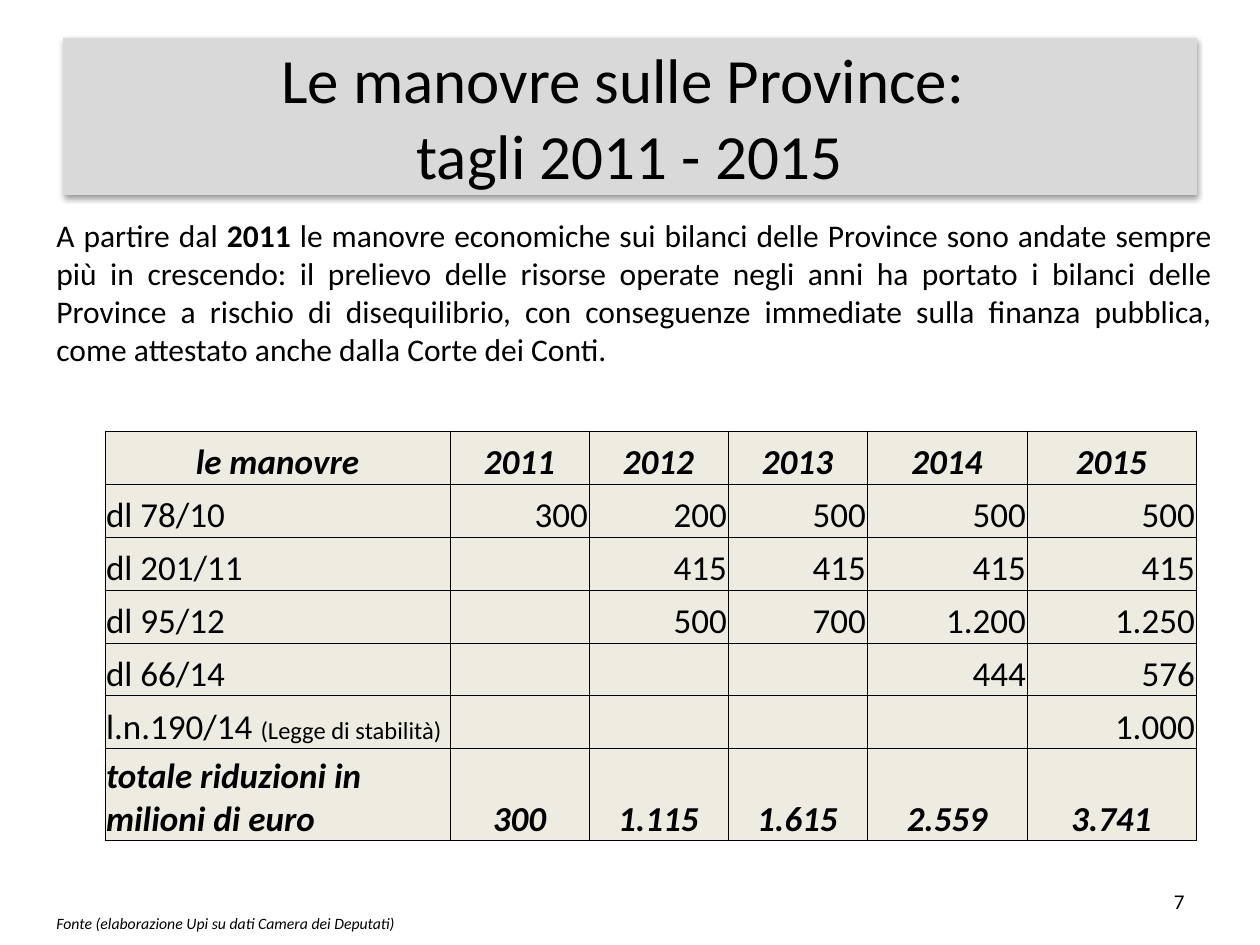
from lxml import etree
from pptx import Presentation
from pptx.dml.color import RGBColor
from pptx.enum.text import MSO_ANCHOR as Anchor, MSO_AUTO_SIZE as AutoSize, PP_ALIGN as Align
from pptx.oxml import parse_xml
from pptx.oxml.ns import nsdecls, qn
from pptx.util import Emu, Pt

PX_PER_INCH = 126
FONT = "Calibri"
BLACK = RGBColor(0x00, 0x00, 0x00)
TITLE_GREY = RGBColor(0xD9, 0xD9, 0xD9)
CELL_BEIGE = RGBColor(0xEE, 0xEC, 0xE1)

INTRO = [
    ("A partire dal ", False),
    ("2011 ", True),
    ("le manovre economiche sui bilanci delle Province sono andate sempre più in crescendo: "
     "il prelievo delle risorse operate negli anni ha portato i bilanci delle Province a rischio "
     "di disequilibrio, con conseguenze immediate sulla finanza pubblica, come attestato anche "
     "dalla Corte dei Conti.", False),
]
COLUMN_WIDTHS = [345, 139, 139, 139, 160, 169]
ROW_HEIGHTS = [53] * 6 + [92]
CUTS = [
    ["le manovre", "2011", "2012", "2013", "2014", "2015"],
    ["dl 78/10", "300", "200", "500", "500", "500"],
    ["dl 201/11", "", "415", "415", "415", "415"],
    ["dl 95/12", "", "500", "700", "1.200", "1.250"],
    ["dl 66/14", "", "", "", "444", "576"],
    ["l.n.190/14 ", "", "", "", "", "1.000"],
    ["totale riduzioni in milioni di euro", "300", "1.115", "1.615", "2.559", "3.741"],
]
STABILITY_LAW_ROW = 5


def px(length):
    return Emu(round(length * 914400 / PX_PER_INCH))


def style_font(font, size, bold=False, italic=False):
    font.name = FONT
    font.size = Pt(size)
    font.bold = bold
    font.italic = italic
    font.color.rgb = BLACK


def add_shadow(shape):
    shape._element.spPr.append(parse_xml(
        f'<a:effectLst {nsdecls("a")}>'
        '<a:outerShdw blurRad="40000" dist="20000" dir="5400000" rotWithShape="0">'
        '<a:srgbClr val="000000"><a:alpha val="38000"/></a:srgbClr>'
        '</a:outerShdw></a:effectLst>'))


def fill_title(slide):
    title = slide.shapes.title
    title.left, title.top, title.width, title.height = px(63), px(38), px(1134), px(157)
    title.fill.solid()
    title.fill.fore_color.rgb = TITLE_GREY
    add_shadow(title)
    frame = title.text_frame
    frame.text = "Le manovre sulle Province: \vtagli 2011 - 2015"
    frame.vertical_anchor = Anchor.MIDDLE
    frame.auto_size = AutoSize.NONE
    paragraph = frame.paragraphs[0]
    paragraph.alignment = Align.CENTER
    style_font(paragraph.font, 36)


def add_text(slide, left, top, width, height, align, anchor=Anchor.TOP):
    """Add an empty wrapping text box and return its paragraph."""
    box = slide.shapes.add_textbox(px(left), px(top), px(width), px(height))
    frame = box.text_frame
    frame.word_wrap = True
    frame.vertical_anchor = anchor
    paragraph = frame.paragraphs[0]
    paragraph.alignment = align
    return paragraph


def add_intro(slide):
    paragraph = add_text(slide, 44, 210, 1181, 165, Align.JUSTIFY)
    for text, bold in INTRO:
        run = paragraph.add_run()
        run.text = text
        style_font(run.font, 18, bold=bold)


def add_borders(cell):
    properties = cell._tc.get_or_add_tcPr()
    for side in ("a:lnL", "a:lnR", "a:lnT", "a:lnB"):
        line = etree.SubElement(properties, qn(side), w=str(Pt(0.5)))
        fill = etree.SubElement(line, qn("a:solidFill"))
        etree.SubElement(fill, qn("a:srgbClr"), val=str(BLACK))


def fill_cell(cell, text, align, emphasis):
    add_borders(cell)
    cell.fill.solid()
    cell.fill.fore_color.rgb = CELL_BEIGE
    cell.margin_left = cell.margin_right = cell.margin_top = px(1)
    cell.margin_bottom = 0
    cell.vertical_anchor = Anchor.BOTTOM
    paragraph = cell.text_frame.paragraphs[0]
    paragraph.alignment = align
    style_font(paragraph.font, 20, bold=emphasis, italic=emphasis)
    if text:
        paragraph.add_run().text = text


def add_cuts_table(slide):
    frame = slide.shapes.add_table(
        len(CUTS), len(COLUMN_WIDTHS), px(105), px(431),
        px(sum(COLUMN_WIDTHS)), px(sum(ROW_HEIGHTS)))
    table = frame.table
    table.first_row = table.horz_banding = False
    for column, width in zip(table.columns, COLUMN_WIDTHS):
        column.width = px(width)
    for row, height in zip(table.rows, ROW_HEIGHTS):
        row.height = px(height)

    last = len(CUTS) - 1
    for r, values in enumerate(CUTS):
        emphasis = r in (0, last)
        for c, text in enumerate(values):
            if c == 0 and r > 0:
                align = Align.LEFT
            else:
                align = Align.CENTER if emphasis else Align.RIGHT
            fill_cell(table.cell(r, c), text, align, emphasis)

    note = table.cell(STABILITY_LAW_ROW, 0).text_frame.paragraphs[0].add_run()
    note.text = "(Legge di stabilità)"
    note.font.size = Pt(14)


def add_footer(slide):
    number = add_text(slide, 903, 876, 294, 50, Align.RIGHT, Anchor.MIDDLE)
    number.text = "7"
    style_font(number.font, 12)
    source = add_text(slide, 44, 908, 367, 32, Align.LEFT)
    source.text = "Fonte (elaborazione Upi su dati Camera dei Deputati)"
    style_font(source.font, 9, italic=True)


def main():
    presentation = Presentation()
    presentation.slide_width, presentation.slide_height = px(1260), px(945)
    slide = presentation.slides.add_slide(presentation.slide_layouts.get_by_name("Title Only"))
    fill_title(slide)
    add_intro(slide)
    add_cuts_table(slide)
    add_footer(slide)
    presentation.save("out.pptx")


if __name__ == "__main__":
    main()
